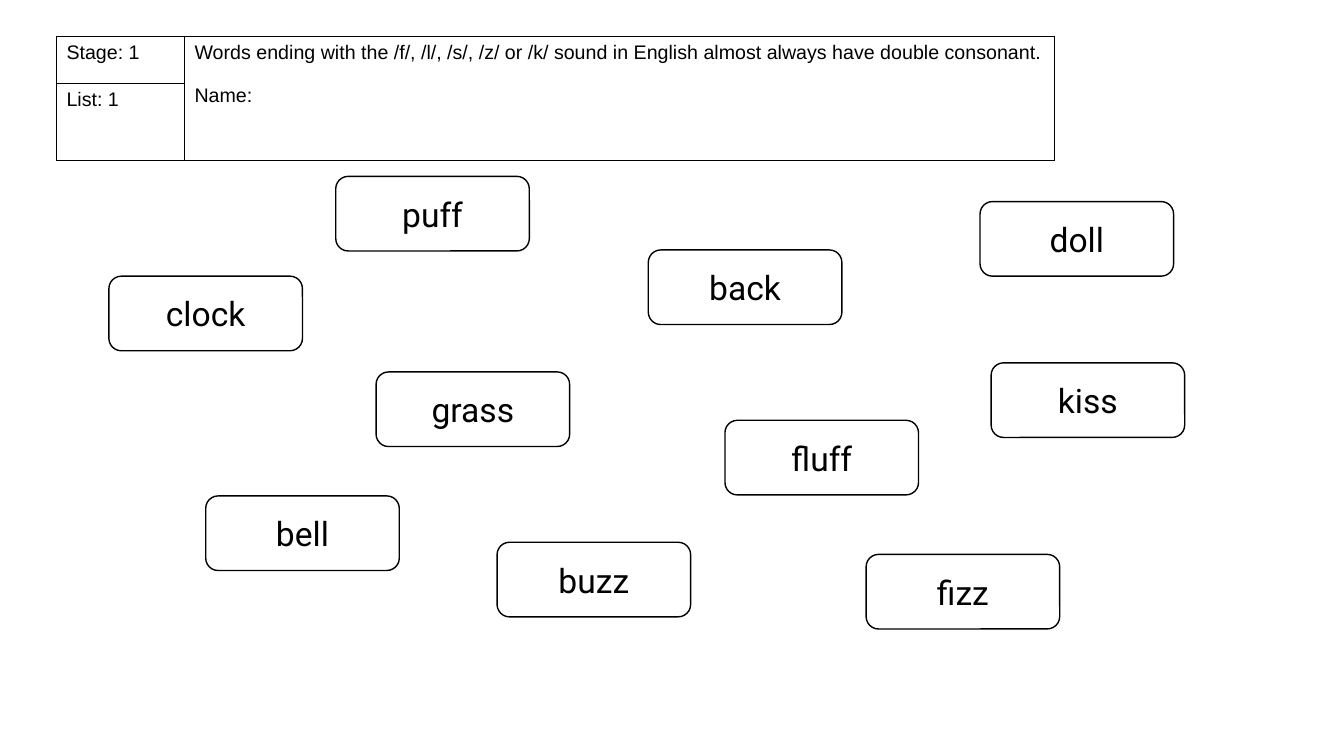
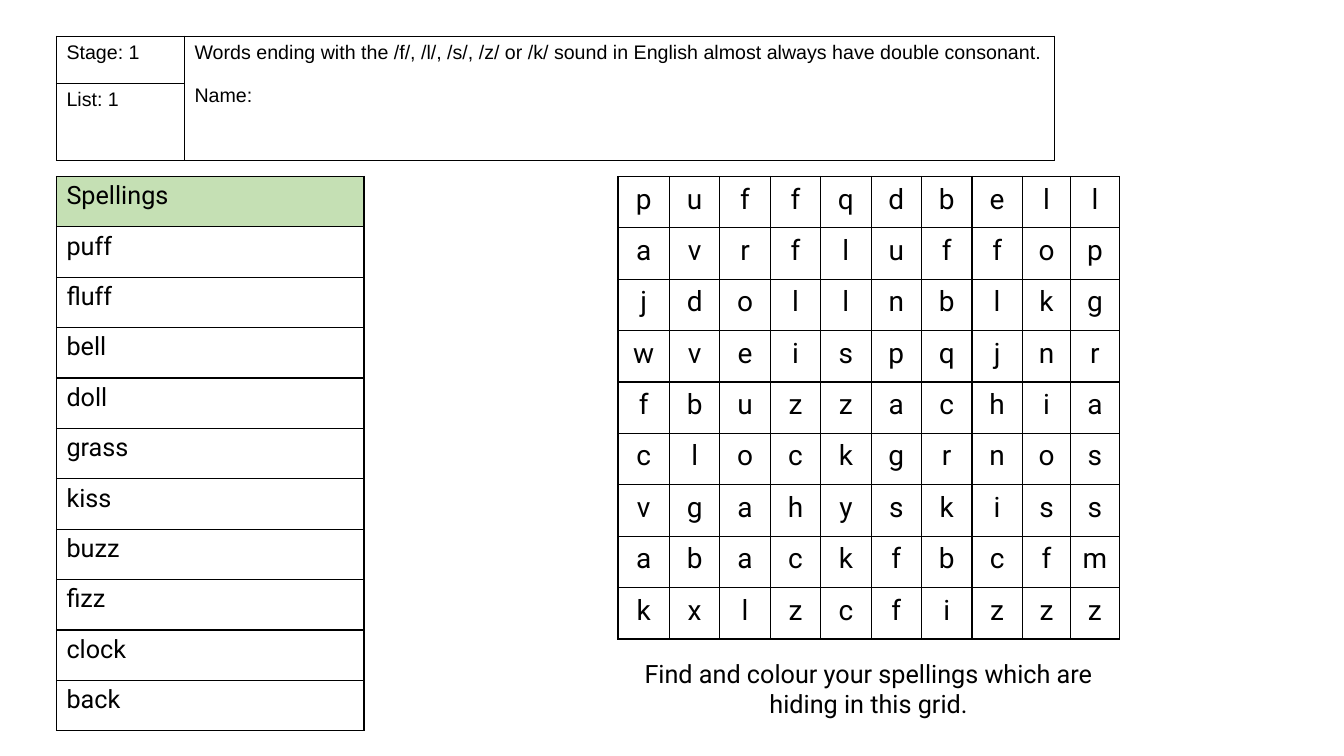
import pptx
import pptx.dml.color
import pptx.enum.shapes
import pptx.enum.text
import pptx.oxml
import pptx.oxml.ns
import pptx.util

PX = 9144  # EMU; 100 px to the inch
SLIDE_SIZE = (1333, 750)
BLACK = pptx.dml.color.RGBColor(0x00, 0x00, 0x00)
WHITE = pptx.dml.color.RGBColor(0xFF, 0xFF, 0xFF)
GREEN = pptx.dml.color.RGBColor(0xC5, 0xE0, 0xB4)
CENTER = pptx.enum.text.PP_ALIGN.CENTER
LINE_WIDTH = pptx.util.Pt(1)


def font_format(name, size):
    return {"name": name, "size": pptx.util.Pt(size), "color": BLACK}


HEADER_FONT = font_format("Arial", 14)
LIST_FONT = font_format("Roboto", 18)
GRID_FONT = font_format("Roboto", 20)
CARD_FONT = font_format("Roboto", 24)
CENTERED = {"alignment": CENTER}
GRID_PARAGRAPH = {
    "alignment": CENTER,
    "line_spacing": 1.2,
    "space_after": pptx.util.Pt(10),
}
GRID_MARGINS = {
    "margin_left": 7 * PX,
    "margin_right": 7 * PX,
    "margin_top": 0,
    "margin_bottom": 0,
}

STAGE = "Stage: 1"
LIST_NUMBER = "List: 1"
RULE = (
    "Words ending with the /f/, /l/, /s/, /z/ or /k/ sound in English "
    "almost always have double consonant."
)
NAME_LABEL = "Name:"
LIST_TITLE = "Spellings"
INSTRUCTION = "Find and colour your spellings which are hiding in this grid."

# Each spelling with the left and top of its card
SPELLINGS = {
    "puff": (333, 175),
    "fluff": (719, 417),
    "bell": (204, 492),
    "doll": (972, 200),
    "grass": (373, 369),
    "kiss": (983, 360),
    "buzz": (493, 538),
    "fizz": (859, 550),
    "clock": (108, 274),
    "back": (643, 248),
}
LETTER_ROWS = [
    "puffqdbell",
    "avrfluffop",
    "jdollnblkg",
    "wveispqjnr",
    "fbuzzachia",
    "clockgrnos",
    "vgahyskiss",
    "abackfbcfm",
    "kxlzcfizzz",
]

CARD_SIZE = (192, 74)
LEFT = 56
HEADER_TOP = 36
HEADER_COLUMNS = [127, 863]
HEADER_ROWS = [47, 76]
BODY_TOP = 175
LIST_WIDTH = 305
LIST_ROW = 50
GRID_LEFT = 613
GRID_COLUMNS = [51] + [50] * 7 + [48] * 2
GRID_ROW = 51
CAPTION_TOP = 648
CAPTION_HEIGHT = 71


def emu(*lengths):
    return [length * PX for length in lengths]


def apply(target, values):
    for attribute, value in values.items():
        setattr(target, attribute, value)


def write(text_frame, text, font, paragraph_format=None):
    text_frame.text = text
    for paragraph in text_frame.paragraphs:
        apply(paragraph, paragraph_format or {})
        for run in paragraph.runs:
            run.font.name = font["name"]
            run.font.size = font["size"]
            run.font.color.rgb = font["color"]


def add_borders(cell):
    properties = cell._tc.get_or_add_tcPr()
    for side in ("lnL", "lnR", "lnT", "lnB"):
        properties.append(pptx.oxml.parse_xml(
            f'<a:{side} {pptx.oxml.ns.nsdecls("a")} w="{LINE_WIDTH}">'
            f'<a:solidFill><a:srgbClr val="{BLACK}"/></a:solidFill></a:{side}>'
        ))


def add_table(slide, left, top, columns, rows, texts, font,
              paragraph_format=None, margins=None, fill=None):
    frame = slide.shapes.add_table(
        len(rows), len(columns), *emu(left, top, sum(columns), sum(rows)))
    table = frame.table
    apply(table, {"first_row": False, "horz_banding": False})
    for column, width in zip(table.columns, columns):
        column.width = width * PX
    for row, height, row_texts in zip(table.rows, rows, texts):
        row.height = height * PX
        for cell, text in zip(row.cells, row_texts):
            add_borders(cell)
            set_fill(cell, fill)
            apply(cell, margins or {})
            write(cell.text_frame, text, font, paragraph_format)
    return table


def set_fill(cell, color):
    if color is None:
        cell.fill.background()
    else:
        cell.fill.solid()
        cell.fill.fore_color.rgb = color


def add_header(slide):
    texts = [[STAGE, f"{RULE}\n{NAME_LABEL}"], [LIST_NUMBER, ""]]
    table = add_table(slide, LEFT, HEADER_TOP, HEADER_COLUMNS, HEADER_ROWS,
                      texts, HEADER_FONT)
    rule_cell = table.cell(0, 1)
    rule_cell.merge(table.cell(1, 1))
    rule_cell.text_frame.paragraphs[1].space_before = pptx.util.Pt(15.5)


def add_card(slide, word, position):
    card = slide.shapes.add_shape(
        pptx.enum.shapes.MSO_SHAPE.ROUNDED_RECTANGLE,
        *emu(*position, *CARD_SIZE))
    card.shadow.inherit = False
    card.fill.solid()
    card.fill.fore_color.rgb = WHITE
    card.line.color.rgb = BLACK
    card.line.width = LINE_WIDTH
    card.text_frame.vertical_anchor = pptx.enum.text.MSO_ANCHOR.MIDDLE
    write(card.text_frame, word, CARD_FONT, CENTERED)


def add_spelling_list(slide):
    texts = [[word] for word in (LIST_TITLE, *SPELLINGS)]
    table = add_table(slide, LEFT, BODY_TOP, [LIST_WIDTH],
                      [LIST_ROW] * len(texts), texts, LIST_FONT)
    set_fill(table.cell(0, 0), GREEN)


def add_word_search(slide):
    add_table(slide, GRID_LEFT, BODY_TOP, GRID_COLUMNS,
              [GRID_ROW] * len(LETTER_ROWS), LETTER_ROWS, GRID_FONT,
              GRID_PARAGRAPH, GRID_MARGINS, WHITE)
    caption = slide.shapes.add_textbox(
        *emu(GRID_LEFT, CAPTION_TOP, sum(GRID_COLUMNS), CAPTION_HEIGHT))
    caption.text_frame.word_wrap = True
    write(caption.text_frame, INSTRUCTION, LIST_FONT, CENTERED)


def add_slide(presentation):
    slide = presentation.slides.add_slide(presentation.slide_layouts[6])
    add_header(slide)
    return slide


def main():
    presentation = pptx.Presentation()
    presentation.slide_width, presentation.slide_height = emu(*SLIDE_SIZE)

    card_slide = add_slide(presentation)
    for word, position in SPELLINGS.items():
        add_card(card_slide, word, position)

    search_slide = add_slide(presentation)
    add_spelling_list(search_slide)
    add_word_search(search_slide)

    presentation.save("out.pptx")


if __name__ == "__main__":
    main()
